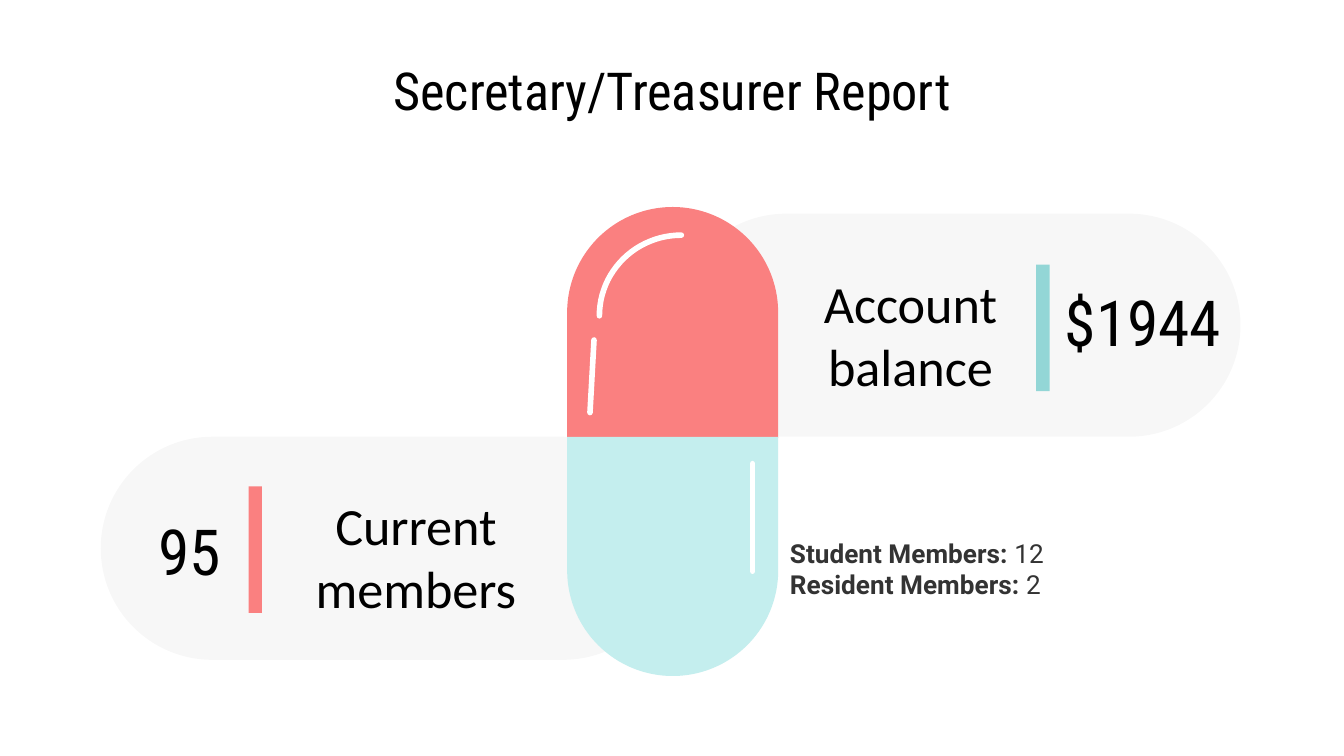
from math import cos, pi, sin

from lxml.etree import SubElement
from pptx import Presentation
from pptx.dml.color import RGBColor
from pptx.enum.shapes import MSO_CONNECTOR, MSO_SHAPE
from pptx.enum.text import MSO_ANCHOR, MSO_AUTO_SIZE, PP_ALIGN
from pptx.oxml.ns import qn
from pptx.util import Inches, Pt

# Content; places are left, top, width, height in inches
TITLE = ("Secretary/Treasurer Report", (0.34, 0.33, 9.32, 0.83))
FACTS = [
    {"label": "Current members", "label_at": (2.08, 3.57, 2.03, 0.38),
     "value": "95", "value_at": (0.97, 3.62, 0.88, 0.94),
     "panel_at": (0.75, 3.25, 4.27, 1.66), "bar_at": (1.85, 3.62, 0.1, 0.94), "bar": "coral"},
    {"label": "Account balance", "label_at": (5.76, 1.92, 2.03, 0.38),
     "value": "$1944", "value_at": (7.76, 1.92, 1.49, 0.94),
     "panel_at": (5.02, 1.59, 4.21, 1.66), "bar_at": (7.71, 1.97, 0.1, 0.94), "bar": "teal"},
]
MEMBERS = [("Student Members:\u00a0", "12"), ("Resident Members:\u00a0", "2")]
MEMBERS_AT = (5.78, 3.95, 5, 0.57)
PILL = [("coral", (4.22, 1.54, 1.57, 1.72), 0), ("aqua", (4.22, 3.25, 1.57, 1.78), 180)]
GLINTS = [(4.42, 2.53, 4.39, 3.07), (5.6, 3.45, 5.6, 4.25)]
GLINT_ARC = {"center": (5.07, 2.35), "radii": (0.61, 0.6), "steps": 24}

THEME = {
    "coral": "FA8080", "teal": "93D6D6", "aqua": "C4EEEE", "black": "000000",
    "white": "FFFFFF", "gray": "333333", "panel_alpha": 3, "glint": 3,
    "title": ("Roboto Condensed", 28), "label": ("Calibri", 28),
    "value": ("Roboto Condensed", 34), "members": ("Roboto", 14),
}


def color(name):
    return RGBColor.from_string(THEME[name])


def add_block(slide, kind, place, fill, alpha=None):
    shape = slide.shapes.add_shape(kind, *map(Inches, place))
    shape.shadow.inherit = False
    shape.fill.solid()
    shape.fill.fore_color.rgb = color(fill)
    shape.line.fill.background()
    if alpha is not None:
        tint = shape.element.spPr.find(f"{qn('a:solidFill')}/{qn('a:srgbClr')}")
        SubElement(tint, qn("a:alpha")).set("val", str(alpha * 1000))
    return shape


def style_glint(shape):
    shape.line.color.rgb = color("white")
    shape.line.width = Pt(THEME["glint"])
    properties = shape.element.spPr
    properties.find(qn("a:ln")).set("cap", "rnd")
    SubElement(properties, qn("a:effectLst"))


def set_frame(box, inset, anchor=MSO_ANCHOR.TOP):
    frame = box.text_frame
    frame.word_wrap = True
    frame.auto_size = MSO_AUTO_SIZE.NONE
    frame.vertical_anchor = anchor
    frame.margin_left = frame.margin_right = Inches(0.1)
    frame.margin_top = frame.margin_bottom = Inches(inset)
    return frame


def add_span(para, text, style, ink="black", bold=False):
    span = para.add_run()
    span.text = text
    span.font.name, size = THEME[style]
    span.font.size = Pt(size)
    span.font.bold = bold
    span.font.color.rgb = color(ink)


def write_centered(box, text, style, anchor=MSO_ANCHOR.TOP):
    para = set_frame(box, 0.1, anchor).paragraphs[0]
    para.alignment = PP_ALIGN.CENTER
    add_span(para, text, style)


def add_box(slide, place):
    return slide.shapes.add_textbox(*map(Inches, place))


# Widescreen deck, 16 to 9
deck = Presentation()
deck.slide_width = Inches(10)
deck.slide_height = deck.slide_width * 9 // 16
slide = deck.slides.add_slide(deck.slide_layouts[5])

# Title
text, place = TITLE
title = slide.shapes.title
title.left, title.top, title.width, title.height = map(Inches, place)
write_centered(title, text, "title")

# Panels with a bar, a value and a label
for fact in FACTS:
    panel = add_block(slide, MSO_SHAPE.ROUNDED_RECTANGLE, fact["panel_at"], "black", THEME["panel_alpha"])
    panel.adjustments[0] = 0.5
    add_block(slide, MSO_SHAPE.RECTANGLE, fact["bar_at"], fact["bar"])
    write_centered(add_box(slide, fact["value_at"]), fact["value"], "value", MSO_ANCHOR.MIDDLE)
    write_centered(add_box(slide, fact["label_at"]), fact["label"], "label")

# Pill halves
for fill, place, turn in PILL:
    half = add_block(slide, MSO_SHAPE.ROUND_2_SAME_RECTANGLE, place, fill)
    half.adjustments[0] = 0.5
    half.rotation = turn

# Curved glint: a quarter ellipse from its top to its left end
(center_x, center_y), (radius_x, radius_y) = GLINT_ARC["center"], GLINT_ARC["radii"]
angles = [pi / 2 * (1 + step / GLINT_ARC["steps"]) for step in range(GLINT_ARC["steps"] + 1)]
points = [(Inches(center_x + radius_x * cos(angle)), Inches(center_y - radius_y * sin(angle)))
          for angle in angles]
builder = slide.shapes.build_freeform(*points[0])
builder.add_line_segments(points[1:], close=False)
curve = builder.convert_to_shape()
curve.fill.background()
style_glint(curve)

# Straight glints
for ends in GLINTS:
    style_glint(slide.shapes.add_connector(MSO_CONNECTOR.STRAIGHT, *map(Inches, ends)))

# Member counts
frame = set_frame(add_box(slide, MEMBERS_AT), 0.05)
for index, (name, count) in enumerate(MEMBERS):
    para = frame.add_paragraph() if index else frame.paragraphs[0]
    add_span(para, name, "members", "gray", bold=True)
    add_span(para, count, "members", "gray")

deck.save("out.pptx")
